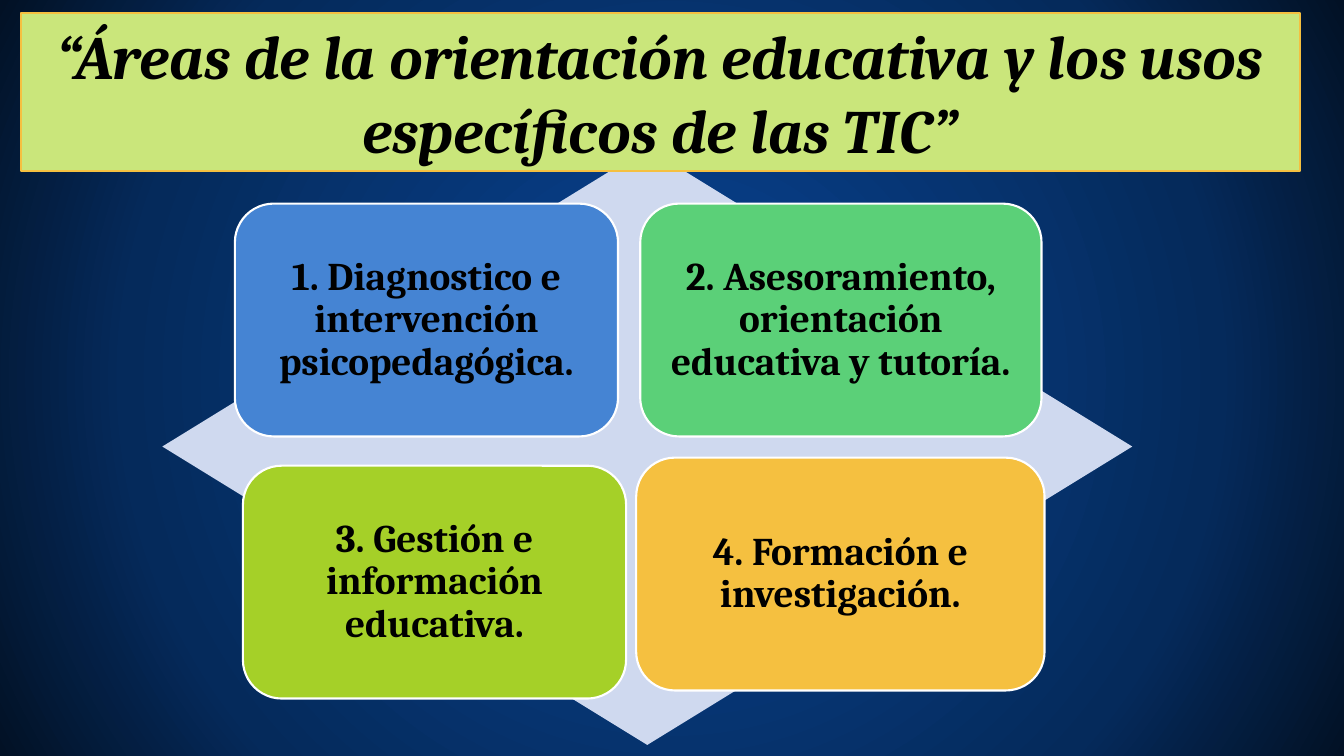
from dataclasses import dataclass

from pptx import Presentation
from pptx.dml.color import RGBColor
from pptx.enum.shapes import MSO_SHAPE
from pptx.enum.text import MSO_ANCHOR, MSO_AUTO_SIZE, PP_ALIGN
from pptx.oxml import parse_xml
from pptx.oxml.ns import nsdecls
from pptx.util import Inches, Pt

DIAMOND = MSO_SHAPE.DIAMOND
ROUNDED = MSO_SHAPE.ROUNDED_RECTANGLE
MIDDLE = MSO_ANCHOR.MIDDLE
NO_FIT = MSO_AUTO_SIZE.NONE
CENTER = PP_ALIGN.CENTER
TITLE_ONLY = 5


@dataclass(frozen=True)
class Theme:
    font: str = "Cambria"
    title_size: int = 44
    area_size: int = 28
    line_width: float = 1.5
    text: str = "000000"
    white: str = "FFFFFF"
    diamond: str = "CFD9EF"
    title_fill: str = "CAE67B"
    blue: str = "4584D3"
    green: str = "5BD078"
    lime: str = "A5D028"
    amber: str = "F5C040"
    background: tuple = ((17, "073E87"), (71, "052A5B"), (100, "021125"))


THEME = Theme()

AREAS = (
    ("1. Diagnostico e intervención psicopedagógica.", 2.33, 2.02, 3.8, THEME.blue),
    ("2. Asesoramiento, orientación educativa y tutoría.", 6.35, 2.02, 3.98, THEME.green),
    ("3. Gestión e información educativa.", 2.41, 4.62, 3.8, THEME.lime),
    ("4. Formación e investigación.", 6.31, 4.54, 4.05, THEME.amber),
)
AREA_HEIGHT = 2.31


def set_background(slide):
    stops = "".join(
        f'<a:gs pos="{pos * 1000}"><a:srgbClr val="{color}"/></a:gs>'
        for pos, color in THEME.background
    )
    bg = parse_xml(
        f'<p:bg {nsdecls("p", "a")}><p:bgPr><a:gradFill rotWithShape="1">'
        f'<a:gsLst>{stops}</a:gsLst><a:path path="circle">'
        '<a:fillToRect l="50000" t="50000" r="50000" b="50000"/></a:path>'
        '</a:gradFill><a:effectLst/></p:bgPr></p:bg>'
    )
    slide.element.cSld.insert(0, bg)


def paint(sp, fill, line=None):
    sp.fill.solid()
    sp.fill.fore_color.rgb = RGBColor.from_string(fill)
    if line:
        sp.line.color.rgb = RGBColor.from_string(line)
        sp.line.width = Pt(THEME.line_width)
    else:
        sp.line.fill.background()


def write(sp, text, size, italic=False):
    tf = sp.text_frame
    tf.text = text
    tf.word_wrap = True
    tf.auto_size = NO_FIT
    tf.vertical_anchor = MIDDLE
    p = tf.paragraphs[0]
    p.alignment = CENTER
    p.font.name = THEME.font
    p.font.size = Pt(size)
    p.font.bold = True
    p.font.italic = italic
    p.font.color.rgb = RGBColor.from_string(THEME.text)
    return tf


def add_block(slide, kind, left, top, width, height, fill, line=None):
    sp = slide.shapes.add_shape(
        kind, Inches(left), Inches(top), Inches(width), Inches(height)
    )
    sp.shadow.inherit = False
    paint(sp, fill, line)
    return sp


def add_area(slide, text, left, top, width, fill):
    sp = add_block(slide, ROUNDED, left, top, width, AREA_HEIGHT, fill, THEME.white)
    tf = write(sp, text, THEME.area_size)
    tf.margin_left = tf.margin_right = Inches(0.12)
    tf.margin_top = tf.margin_bottom = Inches(0.12)
    tf.paragraphs[0].line_spacing = 0.9


def set_title(slide, text):
    sp = slide.shapes.title
    sp.left, sp.top = Inches(0.21), Inches(0.13)
    sp.width, sp.height = Inches(12.68), Inches(1.57)
    paint(sp, THEME.title_fill, THEME.amber)
    write(sp, text, THEME.title_size, italic=True)
    slide.shapes.element.append(sp.element)


def main():
    prs = Presentation()
    prs.slide_width, prs.slide_height = Inches(13.33), Inches(7.5)
    slide = prs.slides.add_slide(prs.slide_layouts[TITLE_ONLY])
    set_background(slide)
    add_block(slide, DIAMOND, 1.61, 1.47, 9.62, 5.92, THEME.diamond)
    for area in AREAS:
        add_area(slide, *area)
    set_title(slide, "“Áreas de la orientación educativa y los usos específicos de las TIC”")
    prs.save("out.pptx")


if __name__ == "__main__":
    main()
